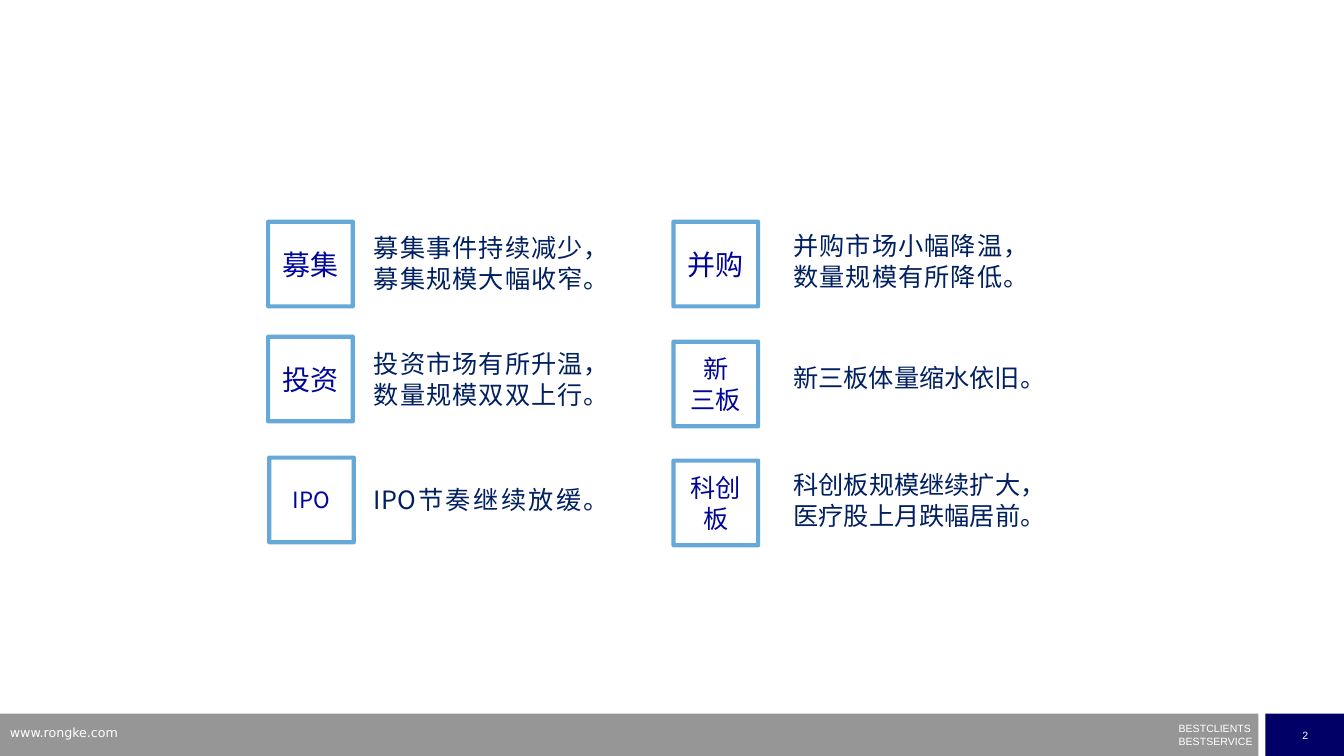
from typing import Any, NamedTuple

import lxml.etree
import pptx
import pptx.dml.color
import pptx.enum.shapes
import pptx.enum.text
import pptx.oxml.ns
import pptx.util

Inches = pptx.util.Inches
Align = pptx.enum.text.PP_ALIGN
Fit = pptx.enum.text.MSO_AUTO_SIZE
qn = pptx.oxml.ns.qn

HUES = {
    "bar": "969696",
    "navy": "000066",
    "white": "FFFFFF",
    "frame": "0070C0",
    "label": "000798",
    "note": "002060",
}
SIDE = 0.84
BAR_TOP = 7.08
BAR_HIGH = 0.42
NOTE_LEFT = {2.66: 3.61, 2.67: 3.61, 6.68: 7.77}


class Topic(NamedTuple):
    left: float
    top: float
    label: str
    size: float
    note: str
    note_top: float
    note_wide: float = 2.28


TOPICS = [
    Topic(2.66, 2.2, "募集", 20, "募集事件持续减少，\n募集规模大幅收窄。", 2.26),
    Topic(2.66, 3.34, "投资", 20, "投资市场有所升温，\n数量规模双双上行。", 3.41),
    Topic(2.67, 4.54, "IPO", 16, "IPO节奏继续放缓。", 4.76),
    Topic(6.68, 2.2, "并购", 20, "并购市场小幅降温，\n数量规模有所降低。", 2.24),
    Topic(6.68, 3.39, "新\n三板", 18, "新三板体量缩水依旧。", 3.55, 2.7),
    Topic(6.68, 4.57, "科创板", 18, "科创板规模继续扩大，\n医疗股上月跌幅居前。", 4.61, 2.45),
]


def tint(name: str) -> pptx.dml.color.RGBColor:
    return pptx.dml.color.RGBColor.from_string(HUES[name])


def write(shape: Any, text: str, size: float, face: str, hue: str, align: Align) -> None:
    frame = shape.text_frame
    frame.text = text
    for para in frame.paragraphs:
        para.alignment = align
        for run in para.runs:
            run.font.size = pptx.util.Pt(size)
            run.font.name = face
            run.font.color.rgb = tint(hue)
    for props in shape.element.iter(qn("a:rPr")):
        lxml.etree.SubElement(props, qn("a:ea"), typeface=face)


def add_rect(slide: Any, left: float, top: float, wide: float, high: float) -> Any:
    kind = pptx.enum.shapes.MSO_SHAPE.RECTANGLE
    rect = slide.shapes.add_shape(kind, Inches(left), Inches(top), Inches(wide), Inches(high))
    rect.shadow.inherit = False
    rect.text_frame.vertical_anchor = pptx.enum.text.MSO_ANCHOR.MIDDLE
    return rect


def add_text(slide: Any, left: float, top: float, wide: float, high: float) -> Any:
    box = slide.shapes.add_textbox(Inches(left), Inches(top), Inches(wide), Inches(high))
    box.text_frame.word_wrap = True
    return box


def add_bar(slide: Any, left: float, wide: float, hue: str) -> Any:
    bar = add_rect(slide, left, BAR_TOP, wide, BAR_HIGH)
    bar.fill.solid()
    bar.fill.fore_color.rgb = tint(hue)
    bar.line.fill.background()
    return bar


def add_foot(slide: Any) -> None:
    add_bar(slide, 0, 12.48, "bar")
    page = add_bar(slide, 12.55, 0.79, "navy")
    page.text_frame.word_wrap = False
    write(page, "2", 7.5, "Arial", "white", Align.CENTER)

    motto = add_text(slide, 11.69, 7.22, 0.76, 0.2)
    frame = motto.text_frame
    frame.margin_left = frame.margin_right = frame.margin_top = frame.margin_bottom = 0
    frame.auto_size = Fit.SHAPE_TO_FIT_TEXT
    write(motto, "BESTCLIENTS\nBESTSERVICE", 7.5, "Arial", "white", Align.LEFT)
    for para in frame.paragraphs:
        para.line_spacing = 0.5
    frame.paragraphs[1].space_before = pptx.util.Pt(4.3)

    site = add_text(slide, 0, 7.14, 3.2, 0.26)
    write(site, "www.rongke.com", 9, "DejaVu Sans", "white", Align.LEFT)


def add_topic(slide: Any, topic: Topic) -> None:
    tile = add_rect(slide, topic.left, topic.top, SIDE, SIDE)
    tile.fill.background()
    tile.line.color.rgb = tint("frame")
    tile.line.width = pptx.util.Pt(3)
    for color in tile.element.findall(f".//{qn('a:ln')}//{qn('a:srgbClr')}"):
        lxml.etree.SubElement(color, qn("a:alpha"), val="60000")
    write(tile, topic.label, topic.size, "Noto Sans CJK JP", "label", Align.CENTER)

    high = 0.71 if "\n" in topic.note else 0.4
    note = add_text(slide, NOTE_LEFT[topic.left], topic.note_top, topic.note_wide, high)
    note.text_frame.auto_size = Fit.SHAPE_TO_FIT_TEXT
    write(note, topic.note, 18, "Noto Sans CJK SC", "note", Align.JUSTIFY)


def main() -> None:
    deck = pptx.Presentation()
    deck.slide_width = Inches(13.33)
    deck.slide_height = Inches(7.5)
    slide = deck.slides.add_slide(deck.slide_layouts[6])
    add_foot(slide)
    for topic in TOPICS:
        add_topic(slide, topic)
    deck.save("out.pptx")


if __name__ == "__main__":
    main()
